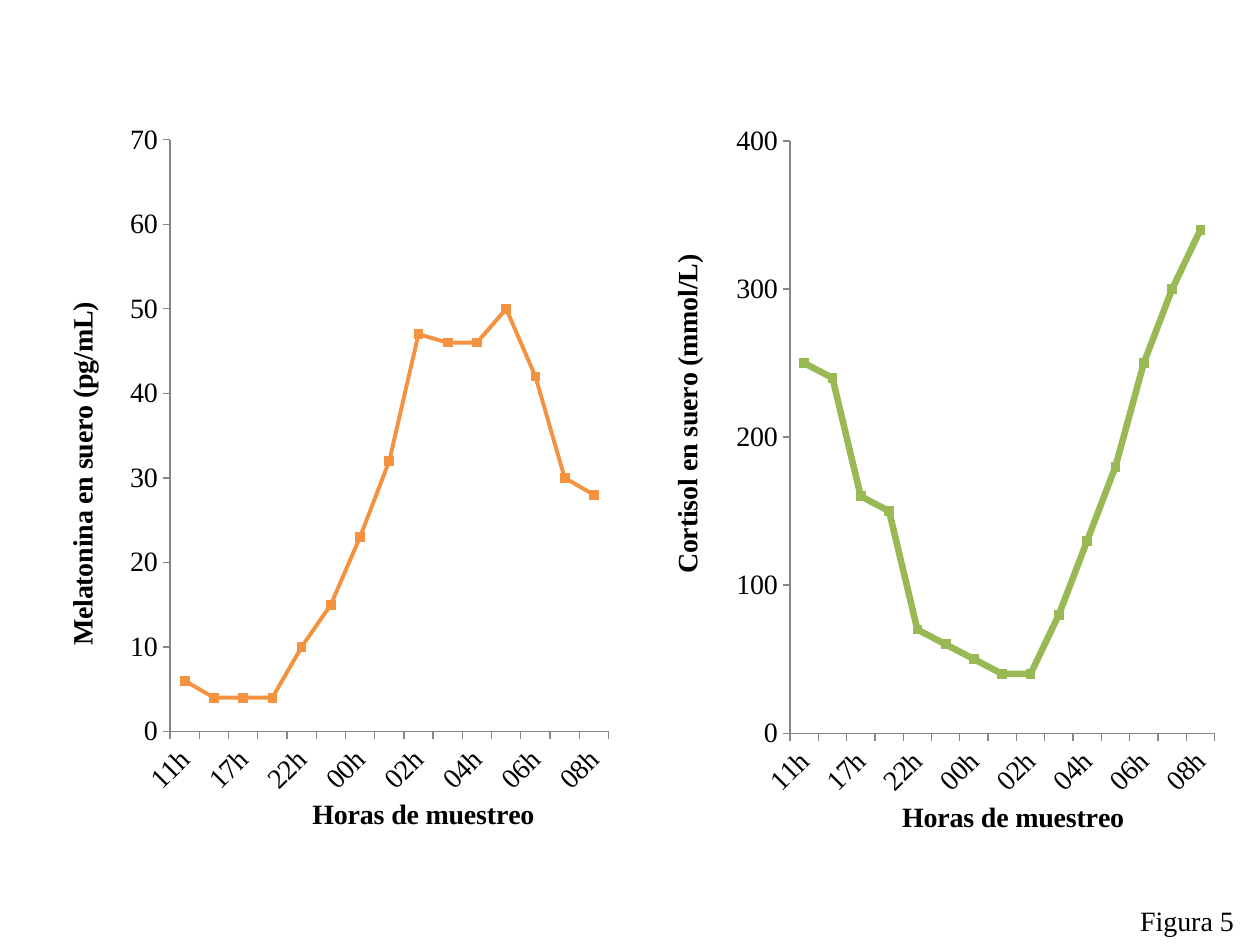
"""Build a slide with line charts of melatonin and cortisol over the sampling hours."""
from pptx import Presentation
from pptx.chart.data import CategoryChartData as Data
from pptx.dml.color import RGBColor as Rgb
from pptx.enum.chart import XL_CHART_TYPE as Kind, XL_MARKER_STYLE as Mark, XL_TICK_MARK as Tick
from pptx.enum.text import MSO_AUTO_SIZE as Fit
from pptx.oxml import parse_xml
from pptx.oxml.ns import nsdecls, qn
from pptx.util import Inches, Pt

HOURS = ["11h", "14h", "17h", "20h", "22h", "23h", "00h", "01h",
         "02h", "03h", "04h", "05h", "06h", "07h", "08h"]
X_NAME = "Horas de muestreo"
CHARTS = [
    {"box": (0.43, 0.92, 4.67, 5.74), "name": "Melatonina en suero (pg/mL)",
     "vals": [6, 4, 4, 4, 10, 15, 23, 32, 47, 46, 46, 50, 42, 30, 28],
     "top": 70, "step": 10, "color": "melatonin", "width": 2.25,
     "plot": (0.92, 0.19, 3.48, 4.7), "x_at": (2.01, 5.36), "y_at": (0.04, 1.44)},
    {"box": (5.24, 0.99, 4.53, 5.83), "name": "Cortisol en suero (mmol/L)",
     "vals": [250, 240, 160, 150, 70, 60, 50, 40, 40, 80, 130, 180, 250, 300, 340],
     "top": 400, "step": 100, "color": "cortisol", "width": 3.75,
     "plot": (1.03, 0.13, 3.37, 4.7), "x_at": (1.88, 5.31), "y_at": (0.03, 0.99)},
]
LABEL = {"text": "Figura 5", "box": (8.95, 7.12, 0.96, 0.37)}
THEME = {"font": "Times New Roman", "size": 16, "mark": 5, "text": "000000",
         "axis": "868686", "melatonin": "F59240", "cortisol": "98B954"}


def color(key):
    return Rgb.from_string(THEME[key])


def style(font, bold=False):
    font.name, font.size, font.bold = THEME["font"], Pt(THEME["size"]), bold
    font.color.rgb = color("text")


def place(node, spot, box, index, target=""):
    old = node.find(qn("c:layout"))
    if old is not None:
        node.remove(old)
    modes = "".join(f'<c:{k}Mode val="edge"/>' for k in "xy")
    sizes = "".join(f'<c:{k} val="{v / full:.4f}"/>'
                    for k, v, full in zip("xywh", spot, box[2:] * 2))
    node.insert(index, parse_xml(
        f'<c:layout {nsdecls("c")}><c:manualLayout>{target}{modes}{sizes}'
        '</c:manualLayout></c:layout>'))


def set_axis(axis, name, spot, box):
    axis.has_major_gridlines = False
    axis.major_tick_mark, axis.minor_tick_mark = Tick.OUTSIDE, Tick.NONE
    axis.format.line.color.rgb = color("axis")
    axis.format.line.width = Pt(0.75)
    style(axis.tick_labels.font)
    run = axis.axis_title.text_frame.paragraphs[0].add_run()
    run.text = name
    style(run.font, True)
    place(axis.axis_title._element, spot, box, 1)


def add_line(slide, item):
    data = Data()
    data.categories = HOURS
    data.add_series("Series 1", item["vals"])
    box = item["box"]
    chart = slide.shapes.add_chart(Kind.LINE_MARKERS_STACKED, *map(Inches, box), data).chart
    chart.has_legend = chart.has_title = False
    style(chart.font)
    x, y = chart.category_axis, chart.value_axis
    set_axis(x, X_NAME, item["x_at"], box)
    set_axis(y, item["name"], item["y_at"], box)
    x._element.find(qn("c:txPr")).find(qn("a:bodyPr")).set("rot", "-2700000")
    y.minimum_scale, y.maximum_scale, y.major_unit = 0, item["top"], item["step"]
    area = chart._chartSpace.chart.plotArea
    place(area, item["plot"], box, 0, '<c:layoutTarget val="inner"/>')
    line = chart.plots[0].series[0]
    line.smooth = False
    line.format.line.color.rgb = color(item["color"])
    line.format.line.width = Pt(item["width"])
    line.marker.style, line.marker.size = Mark.SQUARE, THEME["mark"]
    fill = line.marker.format.fill
    fill.solid()
    fill.fore_color.rgb = color(item["color"])
    line.marker.format.line.color.rgb = color(item["color"])


def add_label(slide):
    frame = slide.shapes.add_textbox(*map(Inches, LABEL["box"])).text_frame
    frame.word_wrap, frame.auto_size = False, Fit.SHAPE_TO_FIT_TEXT
    run = frame.paragraphs[0].add_run()
    run.text = LABEL["text"]
    style(run.font)


def main():
    deck = Presentation()
    deck.slide_width, deck.slide_height = Inches(10), Inches(7.5)
    slide = deck.slides.add_slide(deck.slide_layouts[6])
    for item in CHARTS:
        add_line(slide, item)
    add_label(slide)
    deck.save("out.pptx")


if __name__ == "__main__":
    main()
